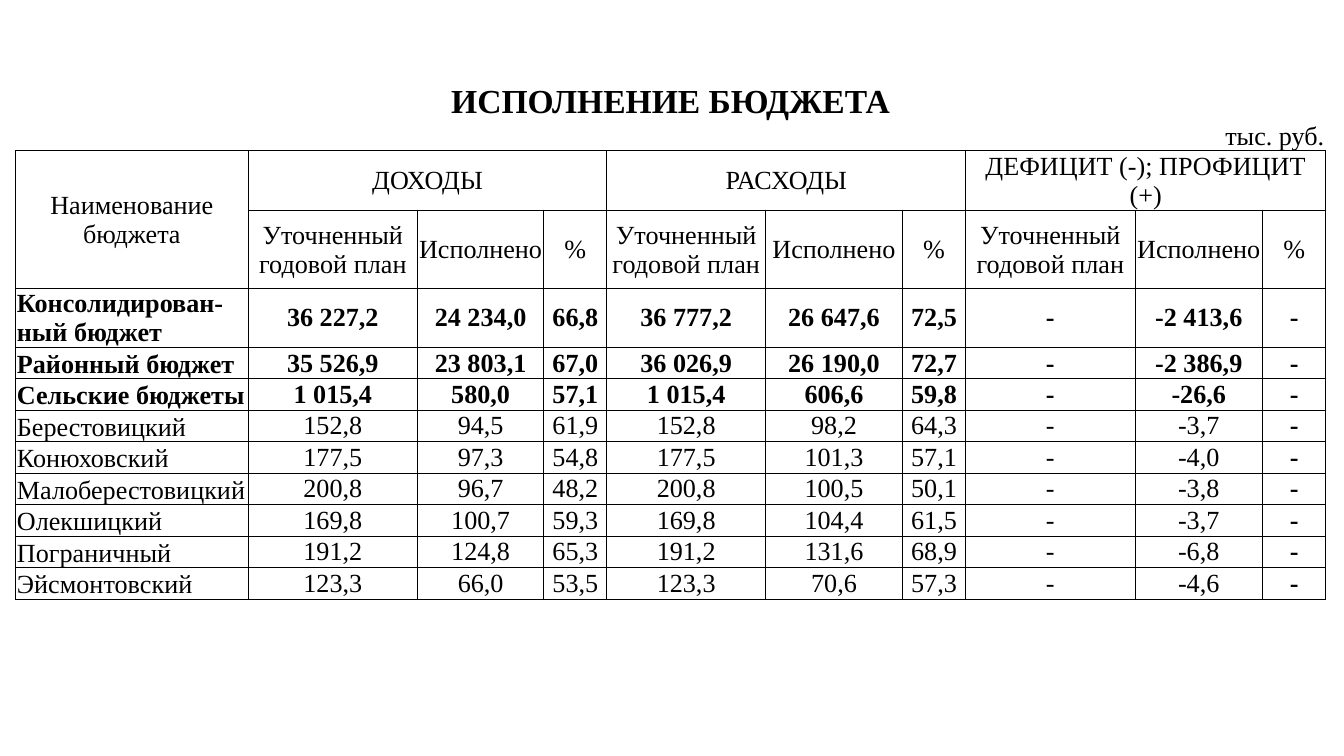
from lxml.etree import SubElement
from pptx import Presentation
from pptx.dml.color import RGBColor
from pptx.enum.text import MSO_ANCHOR, PP_ALIGN
from pptx.oxml.ns import qn
from pptx.util import Pt

COLORS = {"ink": "000000"}
FONT = "Times New Roman"
PLAIN_STYLE = "{2D5ABB26-0587-4C30-8999-92F81FD0307C}"
COLUMN_WIDTHS = [124.6, 72.7, 18, 46.8, 20.9, 33.8, 85, 15.1, 58.3, 6.5, 27.4, 90.7, 37.4, 31, 33.8]
HEADER_HEIGHTS = [18, 15, 30, 42]
DATA_HEIGHT = 15
SPANS = [1, 2, 2, 1, 1, 2, 2, 1, 2, 1]
STARTS = [sum(SPANS[:i]) for i in range(len(SPANS))]
UNIT_ROW_PAIRS = [2, 4, 6, 8, 11, 13]
GROUPS = [(1, 5, "ДОХОДЫ"), (6, 5, "РАСХОДЫ"), (11, 4, "ДЕФИЦИТ (-); ПРОФИЦИТ (+)")]
MEASURES = ["Уточненный годовой план", "Исполнено", "%"]
TOTAL_COUNT = 3
BUDGETS = [
    ("Консолидирован-ный бюджет", "36 227,2", "24 234,0", "66,8", "36 777,2", "26 647,6", "72,5", "-2 413,6"),
    ("Районный бюджет", "35 526,9", "23 803,1", "67,0", "36 026,9", "26 190,0", "72,7", "-2 386,9"),
    ("Сельские бюджеты", "1 015,4", "580,0", "57,1", "1 015,4", "606,6", "59,8", "-26,6"),
    ("Берестовицкий", "152,8", "94,5", "61,9", "152,8", "98,2", "64,3", "-3,7"),
    ("Конюховский", "177,5", "97,3", "54,8", "177,5", "101,3", "57,1", "-4,0"),
    ("Малоберестовицкий", "200,8", "96,7", "48,2", "200,8", "100,5", "50,1", "-3,8"),
    ("Олекшицкий", "169,8", "100,7", "59,3", "169,8", "104,4", "61,5", "-3,7"),
    ("Пограничный", "191,2", "124,8", "65,3", "191,2", "131,6", "68,9", "-6,8"),
    ("Эйсмонтовский", "123,3", "66,0", "53,5", "123,3", "70,6", "57,3", "-4,6"),
]


def add_borders(cell, sides):
    """Draw thin lines on the given sides of a cell."""
    tc_pr = cell._tc.get_or_add_tcPr()
    for side in sides:
        ln = SubElement(tc_pr, qn(f"a:ln{side}"), w=str(Pt(0.5)))
        fill = SubElement(ln, qn("a:solidFill"))
        SubElement(fill, qn("a:srgbClr"), val=COLORS["ink"])


def write_cell(cell, text, size=14, bold=False, align=PP_ALIGN.CENTER, anchor=MSO_ANCHOR.MIDDLE, bottom=0):
    """Fill a cell with formatted text."""
    cell.margin_left = cell.margin_right = cell.margin_top = Pt(0.7)
    cell.margin_bottom = Pt(bottom)
    cell.vertical_anchor = anchor
    cell.text = text
    for p in cell.text_frame.paragraphs:
        p.alignment = align
        p.font.name = FONT
        p.font.size = Pt(size)
        p.font.bold = bold
        p.font.color.rgb = RGBColor.from_string(COLORS["ink"])


def merge_cells(table, row, col, width, height=1):
    """Merge a block of cells and return its first cell."""
    cell = table.cell(row, col)
    if width * height > 1:
        cell.merge(table.cell(row + height - 1, col + width - 1))
    return cell


def add_budget_table(slide):
    """Add the empty table with its sizes and borders."""
    heights = HEADER_HEIGHTS + [DATA_HEIGHT] * len(BUDGETS)
    s = slide.shapes.add_table(len(heights), len(COLUMN_WIDTHS), Pt(8.4), Pt(44), Pt(702), Pt(289))
    table = s.table
    table._tbl.tblPr.find(qn("a:tableStyleId")).text = PLAIN_STYLE
    table.first_row = table.horz_banding = False
    for column, width in zip(table.columns, COLUMN_WIDTHS):
        column.width = Pt(width)
    for i, height in enumerate(heights):
        table.rows[i].height = Pt(height)
        for cell in table.rows[i].cells:
            write_cell(cell, "")
            add_borders(cell, "" if i == 0 else "B" if i == 1 else "LRTB")
            cell.fill.background()
    s.height = Pt(289)
    return table


def fill_headers(table):
    """Write the title, the unit and the column headings."""
    write_cell(merge_cells(table, 0, 0, len(COLUMN_WIDTHS)), "ИСПОЛНЕНИЕ БЮДЖЕТА", size=18, bold=True)
    for col in UNIT_ROW_PAIRS:
        merge_cells(table, 1, col, 2)
    write_cell(table.cell(1, UNIT_ROW_PAIRS[-1]), "тыс. руб.", align=PP_ALIGN.RIGHT, anchor=MSO_ANCHOR.BOTTOM)
    write_cell(merge_cells(table, 2, 0, 1, 2), "Наименование\nбюджета")
    for col, width, text in GROUPS:
        write_cell(merge_cells(table, 2, col, width), text)
    for col, width, text in zip(STARTS[1:], SPANS[1:], MEASURES * len(GROUPS)):
        write_cell(merge_cells(table, 3, col, width), text)


def fill_budgets(table):
    """Write one row for each budget."""
    for i, (name, *values, balance) in enumerate(BUDGETS):
        row = len(HEADER_HEIGHTS) + i
        bold = i < TOTAL_COUNT
        write_cell(table.cell(row, 0), name, bold=bold, align=PP_ALIGN.LEFT, anchor=MSO_ANCHOR.BOTTOM)
        for col, width, text in zip(STARTS[1:], SPANS[1:], [*values, "-", balance, "-"]):
            is_last = col == STARTS[-1]
            write_cell(merge_cells(table, row, col, width), text, bold=bold or is_last, bottom=0.7)


def main():
    """Build the budget slide."""
    prs = Presentation()
    prs.slide_width, prs.slide_height = Pt(720), Pt(405)
    slide = prs.slides.add_slide(prs.slide_layouts[6])
    table = add_budget_table(slide)
    fill_headers(table)
    fill_budgets(table)
    prs.save("out.pptx")


if __name__ == "__main__":
    main()
